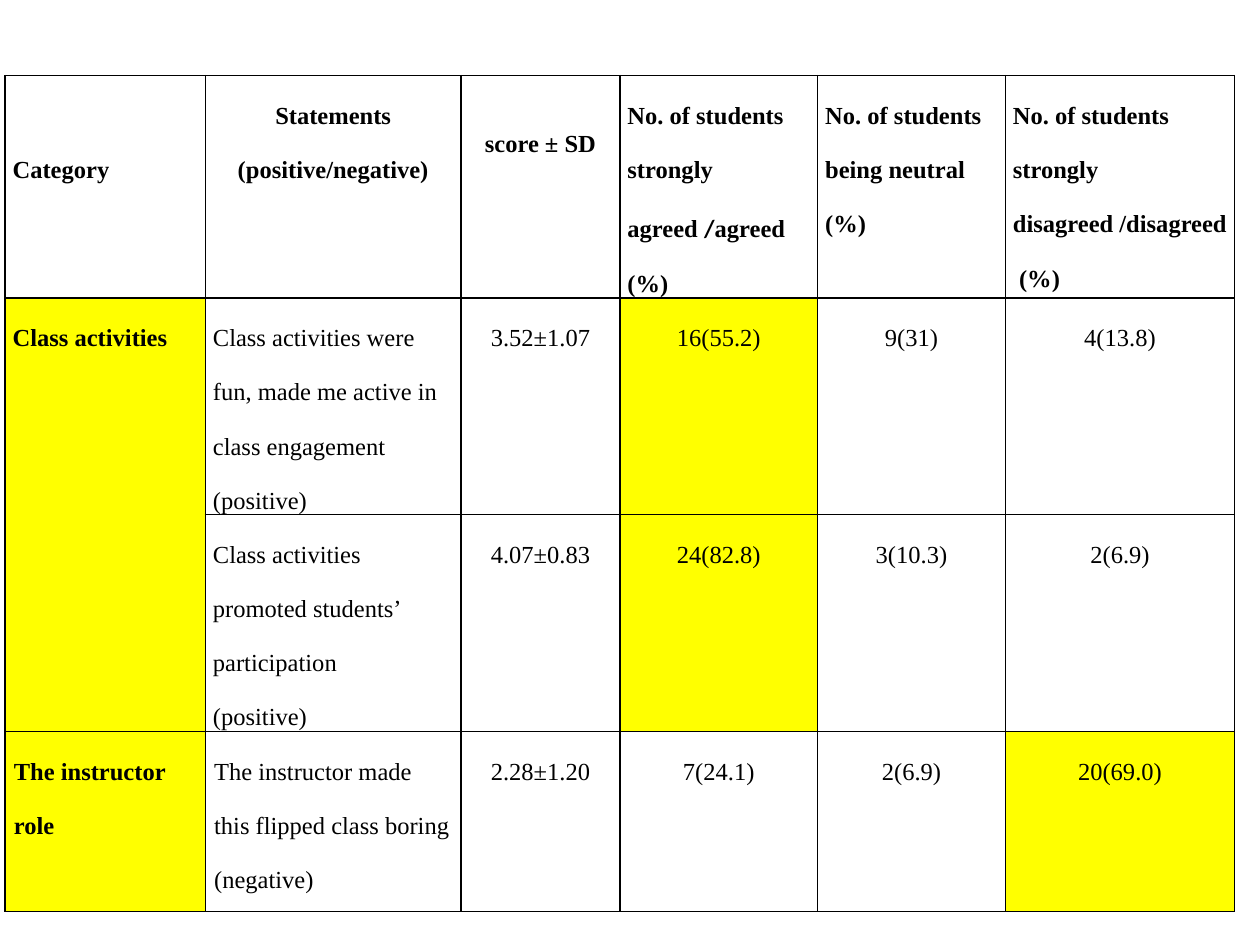
import pptx
import pptx.dml.color
import pptx.enum.text
import pptx.oxml
import pptx.oxml.ns
import pptx.util
from pptx.util import Inches

FONT = "Times New Roman"
BLACK, WHITE, YELLOW = "000000", "FFFFFF", "FFFF00"
LEFT, TOP = 0.04, 0.6
COLUMN_WIDTHS = [1.59, 2.03, 1.26, 1.57, 1.49, 1.82]
ROW_HEIGHTS = [1.11, 1.48, 1.43, 1.43]
SIDE_MARGINS = [0.06, 0.06, 0.06, 0.07]

ROWS = [
    [
        ["Category"],
        ["Statements", "(positive/negative)"],
        ["score ± SD"],
        [[("No. of students strongly agreed ", FONT), ("/", "Calibri"), ("agreed (%)", FONT)]],
        ["No. of students", "being neutral (%)"],
        ["No. of students strongly disagreed /disagreed  (%)"],
    ],
    [
        ["Class activities"],
        ["Class activities were fun, made me active in class engagement", "(positive)"],
        ["3.52±1.07"], ["16(55.2)"], ["9(31)"], ["4(13.8)"],
    ],
    [
        [],
        ["Class activities promoted students’ participation", "(positive)"],
        ["4.07±0.83"], ["24(82.8)"], ["3(10.3)"], ["2(6.9)"],
    ],
    [
        ["The instructor role"],
        ["The instructor made this flipped class boring", "(negative)"],
        ["2.28±1.20"], ["7(24.1)"], ["2(6.9)"], ["20(69.0)"],
    ],
]
HIGHLIGHTED = {(1, 0), (1, 3), (2, 3), (3, 0), (3, 5)}
CENTERED_HEADERS = {1, 2}
HEADER_DROPS = {0: 0.43, 2: 0.22}


def color(value):
    return pptx.dml.color.RGBColor.from_string(value)


def write_text(cell, paragraphs, size=14, bold=False, centered=False, ink=BLACK):
    frame = cell.text_frame
    frame.word_wrap = True
    for index, content in enumerate(paragraphs):
        paragraph = frame.paragraphs[0] if index == 0 else frame.add_paragraph()
        paragraph.line_spacing = 2.0
        alignment = pptx.enum.text.PP_ALIGN
        paragraph.alignment = alignment.CENTER if centered else alignment.LEFT
        runs = [(content, FONT)] if isinstance(content, str) else content
        for text, typeface in runs:
            run = paragraph.add_run()
            run.text = text
            run.font.name = typeface
            run.font.size = pptx.util.Pt(size)
            run.font.bold = bold
            run.font.color.rgb = color(ink)


def draw_borders(cell, ink=BLACK, width=1):
    properties = cell._tc.get_or_add_tcPr()
    namespace = pptx.oxml.ns.nsdecls("a")
    for index, side in enumerate(("lnL", "lnR", "lnT", "lnB")):
        border = pptx.oxml.parse_xml(
            f'<a:{side} {namespace} w="{pptx.util.Pt(width)}"><a:solidFill>'
            f'<a:srgbClr val="{ink}"/></a:solidFill></a:{side}>'
        )
        properties.insert(index, border)


def main():
    presentation = pptx.Presentation()
    presentation.slide_width = Inches(10)
    presentation.slide_height = Inches(7.5)
    slide = presentation.slides.add_slide(presentation.slide_layouts[6])

    table = slide.shapes.add_table(
        len(ROW_HEIGHTS), len(COLUMN_WIDTHS), Inches(LEFT), Inches(TOP),
        Inches(sum(COLUMN_WIDTHS)), Inches(sum(ROW_HEIGHTS)),
    ).table
    table.horz_banding = False
    for column, width in zip(table.columns, COLUMN_WIDTHS):
        column.width = Inches(width)
    for row, height in zip(table.rows, ROW_HEIGHTS):
        row.height = Inches(height)
    table.cell(1, 0).merge(table.cell(2, 0))

    for row_index, row in enumerate(ROWS):
        is_header = row_index == 0
        for column_index, paragraphs in enumerate(row):
            cell = table.cell(row_index, column_index)
            cell.margin_left = cell.margin_right = Inches(SIDE_MARGINS[row_index])
            cell.margin_top = Inches(HEADER_DROPS.get(column_index, 0) if is_header else 0)
            cell.margin_bottom = 0
            cell.fill.solid()
            is_highlighted = (row_index, column_index) in HIGHLIGHTED
            cell.fill.fore_color.rgb = color(YELLOW if is_highlighted else WHITE)
            draw_borders(cell)
            write_text(
                cell, paragraphs,
                bold=is_header or column_index == 0,
                centered=column_index in CENTERED_HEADERS if is_header else column_index > 1,
            )

    presentation.save("out.pptx")


if __name__ == "__main__":
    main()
